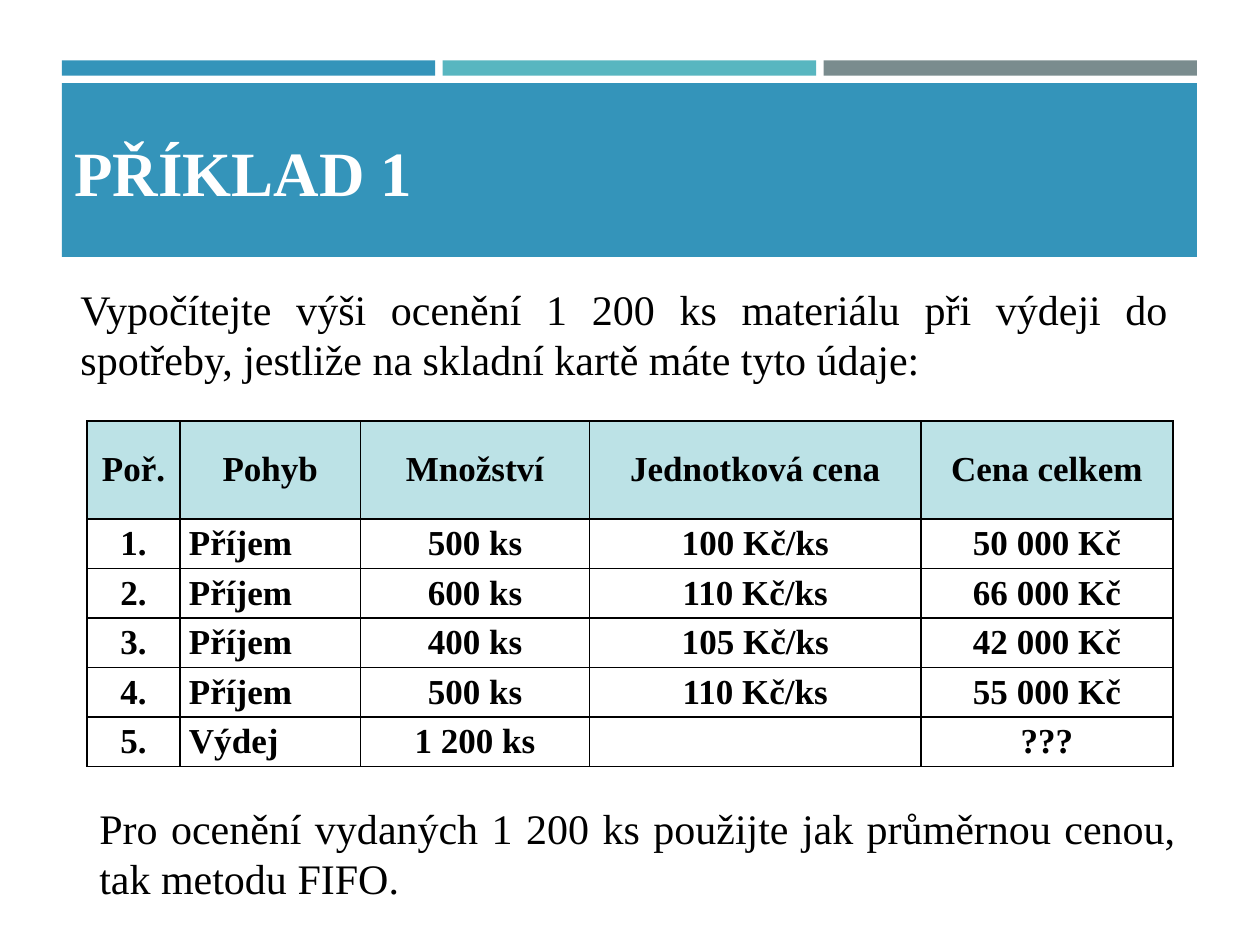
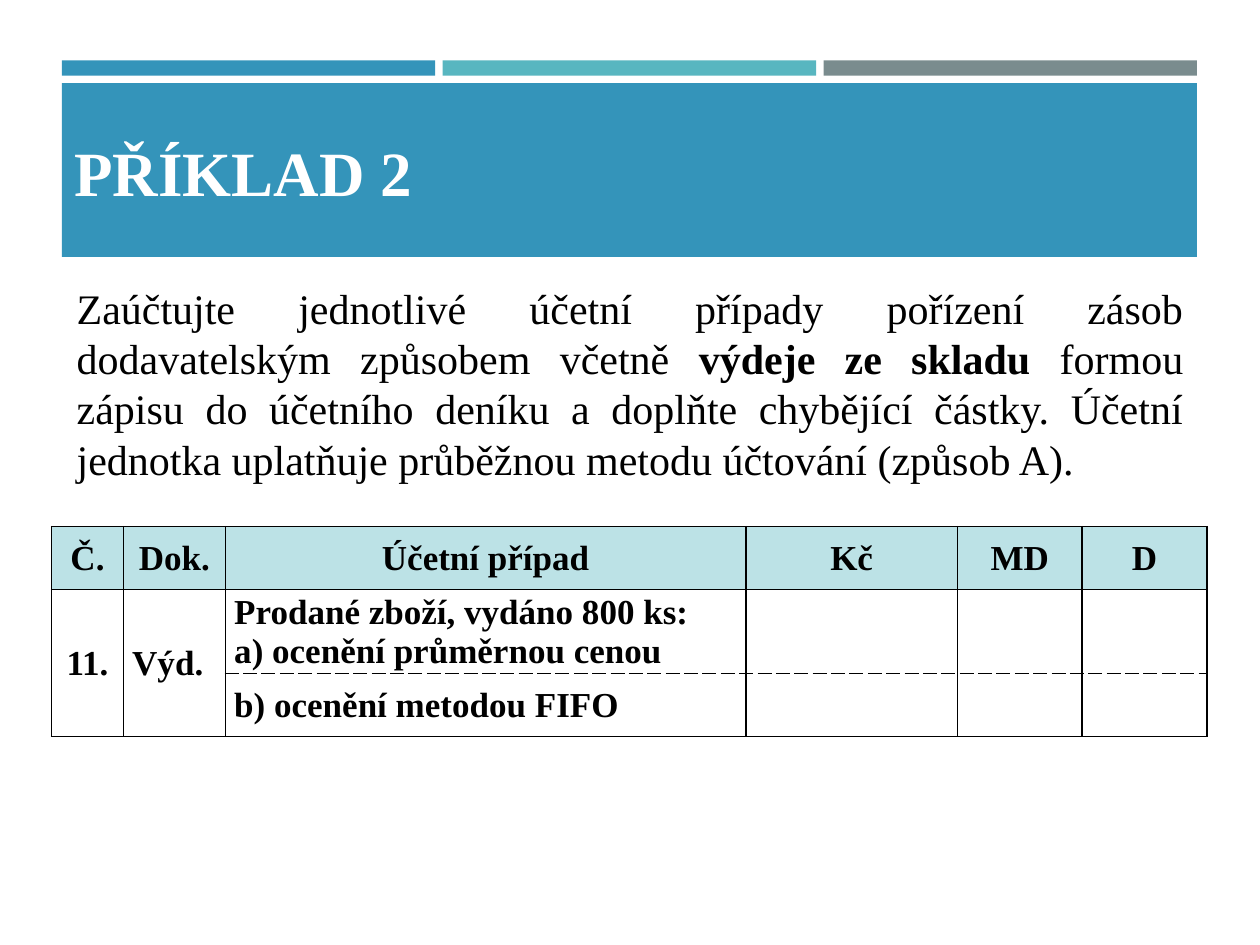
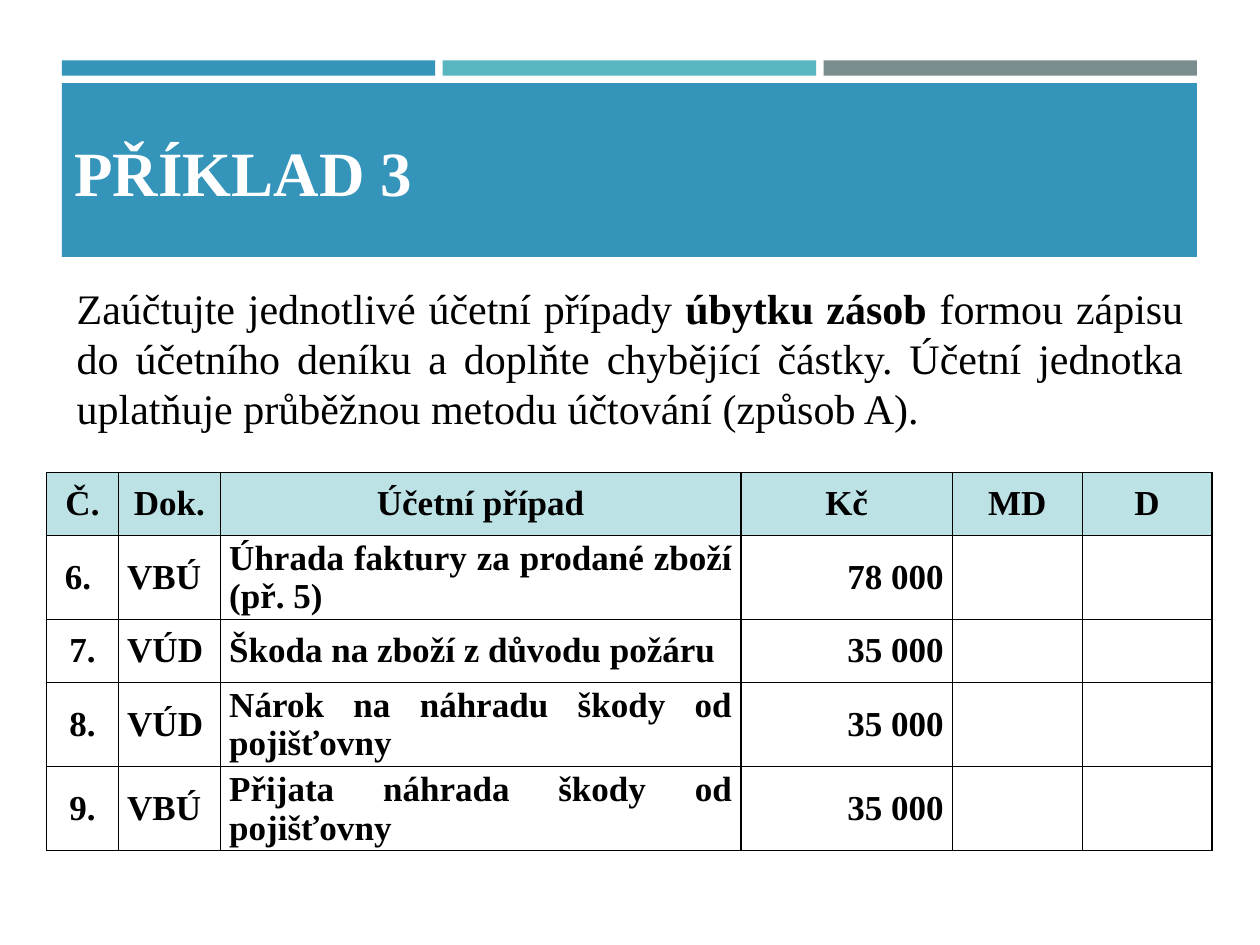
import dataclasses

import lxml.etree
import pptx
import pptx.dml.color
import pptx.enum.shapes
import pptx.enum.text
import pptx.oxml.ns
import pptx.presentation
import pptx.shapes.autoshape
import pptx.slide
import pptx.table
import pptx.text.text
import pptx.util

RGBColor = pptx.dml.color.RGBColor
Align = pptx.enum.text.PP_ALIGN
Anchor = pptx.enum.text.MSO_ANCHOR

BLUE = RGBColor(0x34, 0x94, 0xBA)
TEAL = RGBColor(0x58, 0xB6, 0xC0)
GREY = RGBColor(0x7A, 0x8C, 0x8E)
PALE_TEAL = RGBColor(0xBC, 0xE2, 0xE6)
BLACK = RGBColor(0, 0, 0)
WHITE = RGBColor(255, 255, 255)

FONT = "Times New Roman"
TITLE_SIZE, BODY_SIZE, TABLE_SIZE = 36, 24, 20

SLIDE_WIDTH = pptx.util.Inches(10)
SLIDE_HEIGHT = pptx.util.Inches(7.5)
GRID_COLUMNS, GRID_ROWS = 100, 75

BAND_LEFT, BAND_WIDTH, BAND_GAP = 4.9, 90.1, 0.6
STRIPE_COLORS = (BLUE, TEAL, GREY)
SIDES = ("lnL", "lnR", "lnT", "lnB")

JOURNAL_HEADER = ("Č.", "Dok.", "Účetní případ", "Kč", "MD", "D")
JOURNAL_ALIGNS = (Align.CENTER, Align.LEFT, Align.JUSTIFY, Align.RIGHT, Align.CENTER, Align.CENTER)
JOURNAL_COLUMNS = (5.7, 8.1, 41.3, 16.8)
LOW_ROW, TALL_ROW = 5, 6.6


@dataclasses.dataclass(frozen=True)
class Area:
    left: float
    top: float
    width: float
    height: float

    def place(self) -> tuple[int, int, int, int]:
        return across(self.left), down(self.top), across(self.width), down(self.height)


@dataclasses.dataclass(frozen=True)
class Span:
    text: str
    bold: bool = False


@dataclasses.dataclass(frozen=True)
class Passage:
    area: Area
    spans: tuple[Span, ...]


@dataclasses.dataclass(frozen=True)
class Grid:
    left: float
    top: float
    columns: tuple[float, ...]
    rows: tuple[float, ...]
    aligns: tuple[Align, ...]
    cells: tuple[tuple[str, ...], ...]
    split_row: int | None = None
    merged_columns: int = 0

    def area(self) -> Area:
        return Area(self.left, self.top, sum(self.columns), sum(self.rows))


@dataclasses.dataclass(frozen=True)
class Exercise:
    title: str
    passages: tuple[Passage, ...]
    grid: Grid


def across(columns: float) -> int:
    return round(SLIDE_WIDTH * columns / GRID_COLUMNS)


def down(rows: float) -> int:
    return round(SLIDE_HEIGHT * rows / GRID_ROWS)


def style_paragraph(para: pptx.text.text._Paragraph, size: float, color: RGBColor,
                    align: Align, bold: bool | None = None) -> None:
    para.alignment = align
    para.font.name = FONT
    para.font.size = pptx.util.Pt(size)
    para.font.color.rgb = color
    para.font.bold = bold


def add_band(page: pptx.slide.Slide, area: Area, color: RGBColor) -> pptx.shapes.autoshape.Shape:
    band = page.shapes.add_shape(pptx.enum.shapes.MSO_SHAPE.RECTANGLE, *area.place())
    band.shadow.inherit = False
    band.fill.solid()
    band.fill.fore_color.rgb = color
    band.line.fill.background()
    return band


def move_bands_to_layout(page: pptx.slide.Slide) -> None:
    stripe_width = (BAND_WIDTH - 2 * BAND_GAP) / len(STRIPE_COLORS)
    bands = [
        add_band(page, Area(BAND_LEFT + order * (stripe_width + BAND_GAP), 4.8, stripe_width, 1.2), color)
        for order, color in enumerate(STRIPE_COLORS)
    ]
    bands.append(add_band(page, Area(BAND_LEFT, 6.6, BAND_WIDTH, 13.8), BLUE))
    for order, band in enumerate(bands):
        page.slide_layout.shapes.element.insert(2 + order, band.element)


def write_title(page: pptx.slide.Slide, text: str) -> None:
    title = page.shapes.title
    title.left, title.top, title.width, title.height = Area(BAND_LEFT, 7.5, 90.2, 9.6).place()
    frame = title.text_frame
    frame.text = text
    frame.vertical_anchor = Anchor.BOTTOM
    frame.auto_size = pptx.enum.text.MSO_AUTO_SIZE.NONE
    style_paragraph(frame.paragraphs[0], TITLE_SIZE, WHITE, Align.LEFT, True)


def add_passage(page: pptx.slide.Slide, passage: Passage) -> None:
    box = page.shapes.add_textbox(*passage.area.place())
    box.text_frame.word_wrap = True
    box.text_frame.auto_size = pptx.enum.text.MSO_AUTO_SIZE.SHAPE_TO_FIT_TEXT
    para = box.text_frame.paragraphs[0]
    style_paragraph(para, BODY_SIZE, BLACK, Align.JUSTIFY)
    for span in passage.spans:
        run = para.add_run()
        run.text = span.text
        run.font.bold = span.bold


def set_borders(cell: pptx.table._Cell, dashed_side: str | None) -> None:
    properties = cell._tc.get_or_add_tcPr()
    name = pptx.oxml.ns.qn
    for order, side in enumerate(SIDES):
        line = lxml.etree.Element(name(f"a:{side}"), w=str(pptx.util.Pt(1)))
        fill = lxml.etree.SubElement(line, name("a:solidFill"))
        lxml.etree.SubElement(fill, name("a:srgbClr"), val=str(BLACK))
        dash = "dash" if side == dashed_side else "solid"
        lxml.etree.SubElement(line, name("a:prstDash"), val=dash)
        properties.insert(order, line)


def fill_cell(cell: pptx.table._Cell, text: str, align: Align, header: bool) -> None:
    cell.margin_left = cell.margin_right = across(0.7)
    cell.margin_top = cell.margin_bottom = 0
    cell.vertical_anchor = Anchor.MIDDLE
    cell.text = text
    for para in cell.text_frame.paragraphs:
        style_paragraph(para, TABLE_SIZE, BLACK, align, True)
    if header:
        cell.fill.solid()
        cell.fill.fore_color.rgb = PALE_TEAL
    else:
        cell.fill.background()


def add_grid(page: pptx.slide.Slide, grid: Grid) -> None:
    table = page.shapes.add_table(len(grid.rows), len(grid.columns), *grid.area().place()).table
    table.first_row = table.horz_banding = False
    for column, width in zip(table.columns, grid.columns):
        column.width = across(width)
    for row, height in zip(table.rows, grid.rows):
        row.height = down(height)
    dashed_sides = {}
    if grid.split_row is not None:
        dashed_sides = {grid.split_row: "lnB", grid.split_row + 1: "lnT"}
    for row, texts in enumerate(grid.cells):
        for column, text in enumerate(texts):
            cell = table.cell(row, column)
            header = row == 0
            fill_cell(cell, text, Align.CENTER if header else grid.aligns[column], header)
            set_borders(cell, dashed_sides.get(row) if column >= grid.merged_columns else None)
    if grid.split_row is not None:
        for column in range(grid.merged_columns):
            table.cell(grid.split_row, column).merge(table.cell(grid.split_row + 1, column))


EXERCISES = (
    Exercise(
        "PŘÍKLAD 1",
        (
            Passage(Area(5.4, 22, 88.3, 9.1), (
                Span("Vypočítejte výši ocenění 1 200 ks materiálu při výdeji do spotřeby, "
                     "jestliže na skladní kartě máte tyto údaje:"),
            )),
            Passage(Area(6.9, 63.2, 87.4, 9.1), (
                Span("Pro ocenění vydaných 1 200 ks použijte jak průměrnou cenou, tak metodu FIFO."),
            )),
        ),
        Grid(
            6.9, 33.4, (7.4, 14.3, 18.2, 26.3, 20), (7.8,) + (3.93,) * 5,
            (Align.CENTER, Align.LEFT, Align.CENTER, Align.CENTER, Align.CENTER),
            (
                ("Poř.", "Pohyb", "Množství", "Jednotková cena", "Cena celkem"),
                ("1.", "Příjem", "500 ks", "100 Kč/ks", "50 000 Kč"),
                ("2.", "Příjem", "600 ks", "110 Kč/ks", "66 000 Kč"),
                ("3.", "Příjem", "400 ks", "105 Kč/ks", "42 000 Kč"),
                ("4.", "Příjem", "500 ks", "110 Kč/ks", "55 000 Kč"),
                ("5.", "Výdej", "1 200 ks", "", "???"),
            ),
        ),
    ),
    Exercise(
        "PŘÍKLAD 2",
        (
            Passage(Area(5.1, 21.9, 89.8, 17.2), (
                Span("Zaúčtujte jednotlivé účetní případy pořízení zásob dodavatelským způsobem včetně "),
                Span("výdeje ze skladu ", True),
                Span("formou zápisu do účetního deníku a doplňte chybějící částky. "
                     "Účetní jednotka uplatňuje průběžnou metodu účtování (způsob A)."),
            )),
        ),
        Grid(
            4.1, 41.8, JOURNAL_COLUMNS + (9.9, 9.9), (LOW_ROW, TALL_ROW, LOW_ROW), JOURNAL_ALIGNS,
            (
                JOURNAL_HEADER,
                ("11.", "Výd.", "Prodané zboží, vydáno 800 ks:\na) ocenění průměrnou cenou", "", "", ""),
                ("", "", "b) ocenění metodou FIFO", "", "", ""),
            ),
            split_row=1, merged_columns=2,
        ),
    ),
    Exercise(
        "PŘÍKLAD 3",
        (
            Passage(Area(5.1, 21.9, 89.8, 13.1), (
                Span("Zaúčtujte jednotlivé účetní případy "),
                Span("úbytku zásob ", True),
                Span("formou zápisu do účetního deníku a doplňte chybějící částky. "
                     "Účetní jednotka uplatňuje průběžnou metodu účtování (způsob A)."),
            )),
        ),
        Grid(
            3.7, 37.5, JOURNAL_COLUMNS + (10.3, 10.3),
            (LOW_ROW, TALL_ROW, LOW_ROW, TALL_ROW, TALL_ROW), JOURNAL_ALIGNS,
            (
                JOURNAL_HEADER,
                ("6. ", "VBÚ", "Úhrada faktury za prodané zboží (př. 5)", "78 000", "", ""),
                ("7.", "VÚD", "Škoda na zboží z důvodu požáru", "35 000", "", ""),
                ("8.", "VÚD", "Nárok na náhradu škody od pojišťovny", "35 000", "", ""),
                ("9.", "VBÚ", "Přijata náhrada škody od pojišťovny", "35 000", "", ""),
            ),
        ),
    ),
)


def add_exercise(deck: pptx.presentation.Presentation, exercise: Exercise) -> pptx.slide.Slide:
    page = deck.slides.add_slide(deck.slide_layouts.get_by_name("Title Only"))
    write_title(page, exercise.title)
    for passage in exercise.passages:
        add_passage(page, passage)
    add_grid(page, exercise.grid)
    return page


def main() -> None:
    deck = pptx.Presentation()
    deck.slide_width, deck.slide_height = SLIDE_WIDTH, SLIDE_HEIGHT
    pages = [add_exercise(deck, exercise) for exercise in EXERCISES]
    move_bands_to_layout(pages[0])
    deck.save("out.pptx")


if __name__ == "__main__":
    main()
